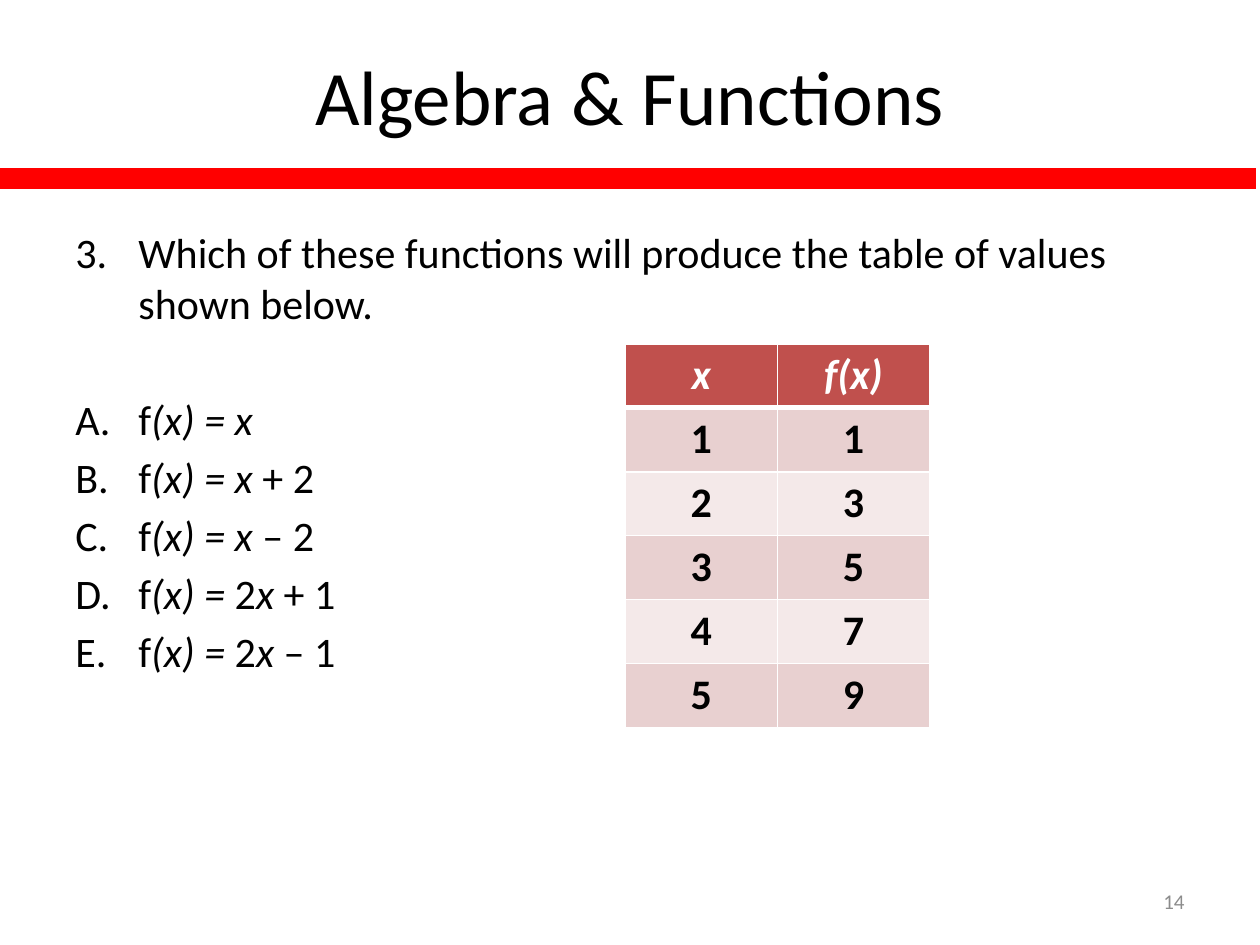
from dataclasses import dataclass

from lxml import etree
from pptx import Presentation
from pptx.dml.color import RGBColor
from pptx.enum.shapes import MSO_SHAPE
from pptx.enum.text import MSO_ANCHOR, PP_ALIGN
from pptx.oxml.ns import qn
from pptx.util import Cm, Pt

RECTANGLE = MSO_SHAPE.RECTANGLE
TOP, MIDDLE = MSO_ANCHOR.TOP, MSO_ANCHOR.MIDDLE
LEFT, CENTER, RIGHT = PP_ALIGN.LEFT, PP_ALIGN.CENTER, PP_ALIGN.RIGHT


@dataclass(frozen=True)
class Theme:
    font: str = "Calibri"
    title_size: int = 44
    body_size: int = 24
    number_size: int = 12
    text: str = "000000"
    muted: str = "8C8C8C"
    white: str = "FFFFFF"
    bar: str = "FF0000"
    header: str = "C0504D"
    bands: tuple = ("E8D0D0", "F4E9E9")


THEME = Theme()
LIST_SPACING = Pt(4.3)
ANSWERS_GAP = Pt(37.6)
LIST_INDENT = Cm(1.27)

QUESTION = "Which of these functions will produce the table of values shown below."
ANSWERS = (
    ("f", "(x) = x"),
    ("f", "(x) = x ", "+ 2"),
    ("f", "(x) = x ", "– 2"),
    ("f", "(x) = ", "2", "x ", "+ 1"),
    ("f", "(x) = ", "2", "x ", "– 1"),
)
VALUES = (("x", "f(x)"), (1, 1), (2, 3), (3, 5), (4, 7), (5, 9))


def add_run(paragraph, text, size, color=THEME.text, bold=False, italic=False):
    run = paragraph.add_run()
    run.text = text
    font = run.font
    font.name, font.size = THEME.font, Pt(size)
    font.bold, font.italic = bold, italic
    font.color.rgb = RGBColor.from_string(color)


def add_text_frame(slide, left, top, width, height, anchor):
    frame = slide.shapes.add_textbox(left, top, width, height).text_frame
    frame.word_wrap = True
    frame.vertical_anchor = anchor
    return frame


def add_label(slide, box, text, size, color, alignment):
    paragraph = add_text_frame(slide, *box, MIDDLE).paragraphs[0]
    paragraph.alignment = alignment
    add_run(paragraph, text, size, color)


def number_paragraph(paragraph, scheme, start=1):
    properties = paragraph._p.get_or_add_pPr()
    properties.set("marL", str(LIST_INDENT))
    properties.set("indent", str(-LIST_INDENT))
    etree.SubElement(properties, qn("a:buFont"), typeface="+mj-lt")
    etree.SubElement(properties, qn("a:buAutoNum"), type=scheme, startAt=str(start))


def add_question(slide):
    frame = add_text_frame(slide, Cm(1.27), Cm(4.45), Cm(22.86), Cm(12.9), TOP)
    question = frame.paragraphs[0]
    question.alignment = LEFT
    question.space_before = LIST_SPACING
    number_paragraph(question, "arabicPeriod", 3)
    add_run(question, QUESTION, THEME.body_size)
    for index, parts in enumerate(ANSWERS):
        answer = frame.add_paragraph()
        answer.alignment = LEFT
        answer.space_before = LIST_SPACING if index else ANSWERS_GAP
        number_paragraph(answer, "alphaUcPeriod")
        for position, part in enumerate(parts):
            add_run(answer, part, THEME.body_size, italic=position % 2 == 1)


def add_bar(slide):
    bar = slide.shapes.add_shape(RECTANGLE, Cm(-0.08), Cm(3.39), Cm(25.4), Cm(0.42))
    bar.shadow.inherit = False
    bar.fill.solid()
    bar.fill.fore_color.rgb = RGBColor.from_string(THEME.bar)
    bar.line.fill.background()


def set_borders(cell, widths):
    properties = cell._tc.get_or_add_tcPr()
    for side, width in widths.items():
        line = etree.SubElement(properties, qn(f"a:ln{side}"), w=str(Pt(width)))
        fill = etree.SubElement(line, qn("a:solidFill"))
        etree.SubElement(fill, qn("a:srgbClr"), val=THEME.white)


def fill_cell(cell, value, row):
    is_header = row == 0
    set_borders(cell, {
        "L": 1, "R": 1,
        "T": 3 if row == 1 else 1,
        "B": 3 if is_header else 1,
    })
    background = THEME.header if is_header else THEME.bands[(row - 1) % 2]
    cell.fill.solid()
    cell.fill.fore_color.rgb = RGBColor.from_string(background)
    paragraph = cell.text_frame.paragraphs[0]
    paragraph.alignment = CENTER
    color = THEME.white if is_header else THEME.text
    add_run(paragraph, str(value), THEME.body_size, color, True, is_header)


def add_value_table(slide):
    rows, columns = len(VALUES), len(VALUES[0])
    column_width, row_height = Cm(3.07), Cm(1.29)
    table = slide.shapes.add_table(
        rows, columns, Cm(12.6), Cm(6.93),
        column_width * columns, row_height * rows,
    ).table
    for row, values in enumerate(VALUES):
        for column, value in enumerate(values):
            fill_cell(table.cell(row, column), value, row)


def main():
    presentation = Presentation()
    presentation.slide_width, presentation.slide_height = Cm(25.4), Cm(19.05)
    slide = presentation.slides.add_slide(presentation.slide_layouts[6])
    title_box = (Cm(1.17), Cm(0.64), Cm(23.06), Cm(2.54))
    number_box = (Cm(18.2), Cm(17.66), Cm(5.93), Cm(1.01))
    add_label(slide, title_box, "Algebra & Functions", THEME.title_size, THEME.text, CENTER)
    add_question(slide)
    add_label(slide, number_box, "14", THEME.number_size, THEME.muted, RIGHT)
    add_bar(slide)
    add_value_table(slide)
    presentation.save("out.pptx")


if __name__ == "__main__":
    main()
